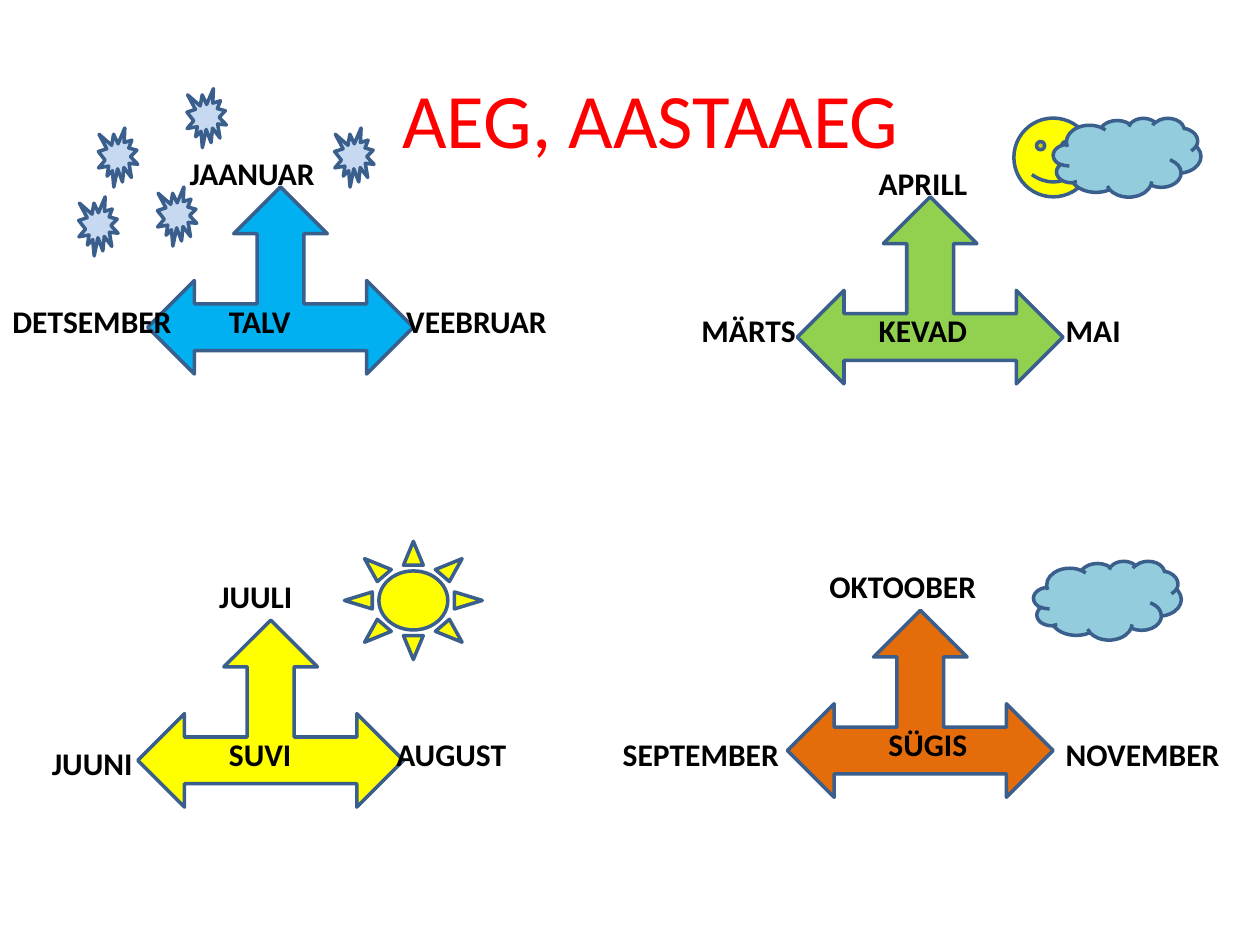
import pptx
import pptx.util
import pptx.dml.color
import pptx.enum.shapes
import pptx.enum.text

Pt = pptx.util.Pt
SHAPE = pptx.enum.shapes.MSO_SHAPE
TEXT = pptx.enum.text

# Theme: colours, type sizes and line width
THEME = {
    "font": "Calibri", "title_size": 44, "label_size": 18, "line_width": 2,
    "title": "FF0000", "text": "000000", "outline": "3A5F8C",
    "winter": "00B0F0", "spring": "92D050", "summer": "FFFF00",
    "autumn": "E46C0A", "sun": "FFFF00", "cloud": "93CDDD", "snow": "C6D9F1",
}

# Layout: positions count cells of a grid 128 columns wide
SLIDE_WIDTH, SLIDE_HEIGHT = 720, 540
CELL = SLIDE_WIDTH / 128
ARROW_SIZE = (27, 19)
LABEL_HEIGHT = 29 / CELL
CLOUD_SIZE = (15, 8)
FLAKE_SIZE = (4, 6)

# Content
TITLE = "AEG, AASTAAEG"
# Each season: colour, arrow corner, labels as (text, left, top, width)
SEASONS = [
    ("winter", (15, 19), [("TALV", 22, 30, 13), ("JAANUAR", 18, 15, 21),
                          ("DETSEMBER", 0, 30, 21), ("VEEBRUAR", 40, 30, 21)]),
    ("spring", (81, 20), [("KEVAD", 88, 31, 13), ("MÄRTS", 70, 31, 14),
                          ("APRILL", 88, 16, 17), ("MAI", 107, 31, 21)]),
    ("summer", (14, 63), [("SUVI", 22, 74, 13), ("JUUNI", 4, 75, 17),
                          ("JUULI", 21, 58, 17), ("AUGUST", 39, 74, 18)]),
    ("autumn", (80, 62), [("SÜGIS", 89, 73, 13), ("SEPTEMBER", 62, 74, 20),
                          ("OKTOOBER", 83, 57, 21), ("NOVEMBER", 107, 74, 21)]),
]
SNOWFLAKES = [(10, 13), (19, 9), (16, 19), (34, 13), (8, 20)]


def colour(key):
    return pptx.dml.color.RGBColor.from_string(THEME[key])


def box(corner, size):
    return [Pt(cells * CELL) for cells in (*corner, *size)]


def add_run(paragraph, text, size, colour_key, bold=False):
    run = paragraph.add_run()
    run.text = text
    run.font.name = THEME["font"]
    run.font.size = Pt(THEME[size])
    run.font.bold = bold
    run.font.color.rgb = colour(colour_key)


def add_figure(shapes, kind, corner, size, fill):
    figure = shapes.add_shape(kind, *box(corner, size))
    figure.shadow.inherit = False
    figure.fill.solid()
    figure.fill.fore_color.rgb = colour(fill)
    figure.line.color.rgb = colour("outline")
    figure.line.width = Pt(THEME["line_width"])


def add_label(shapes, text, left, top, width):
    label = shapes.add_textbox(*box((left, top), (width, LABEL_HEIGHT)))
    frame = label.text_frame
    frame.word_wrap = True
    frame.auto_size = TEXT.MSO_AUTO_SIZE.SHAPE_TO_FIT_TEXT
    add_run(frame.paragraphs[0], text, "label_size", "text", bold=True)


def add_title(slide):
    title = slide.shapes.title
    title.left, title.top, title.width, title.height = Pt(28), Pt(22.5), Pt(648), Pt(90)
    frame = title.text_frame
    frame.vertical_anchor = TEXT.MSO_ANCHOR.MIDDLE
    frame.margin_left = Pt(47)  # moves the centred title right of the snow
    frame.paragraphs[0].alignment = TEXT.PP_ALIGN.CENTER
    add_run(frame.paragraphs[0], TITLE, "title_size", "title")


def main():
    deck = pptx.Presentation()
    deck.slide_width, deck.slide_height = Pt(SLIDE_WIDTH), Pt(SLIDE_HEIGHT)
    slide = deck.slides.add_slide(deck.slide_layouts[5])
    add_title(slide)

    # Seasons: an arrow and its labels, grouped
    for season, corner, labels in SEASONS:
        group = slide.shapes.add_group_shape().shapes
        add_figure(group, SHAPE.LEFT_RIGHT_UP_ARROW, corner, ARROW_SIZE, season)
        for label in labels:
            add_label(group, *label)

    # Weather: autumn cloud, summer sun, winter snow
    add_figure(slide.shapes, SHAPE.CLOUD, (105, 57), CLOUD_SIZE, "cloud")
    add_figure(slide.shapes, SHAPE.SUN, (35, 55), (14, 12), "sun")
    for corner in SNOWFLAKES:
        add_figure(slide.shapes, SHAPE.EXPLOSION1, corner, FLAKE_SIZE, "snow")

    # Spring sun behind a cloud
    spring_sky = slide.shapes.add_group_shape().shapes
    add_figure(spring_sky, SHAPE.SMILEY_FACE, (103, 12), (8, 8), "sun")
    add_figure(spring_sky, SHAPE.CLOUD, (107, 12), CLOUD_SIZE, "cloud")

    deck.save("out.pptx")


if __name__ == "__main__":
    main()
